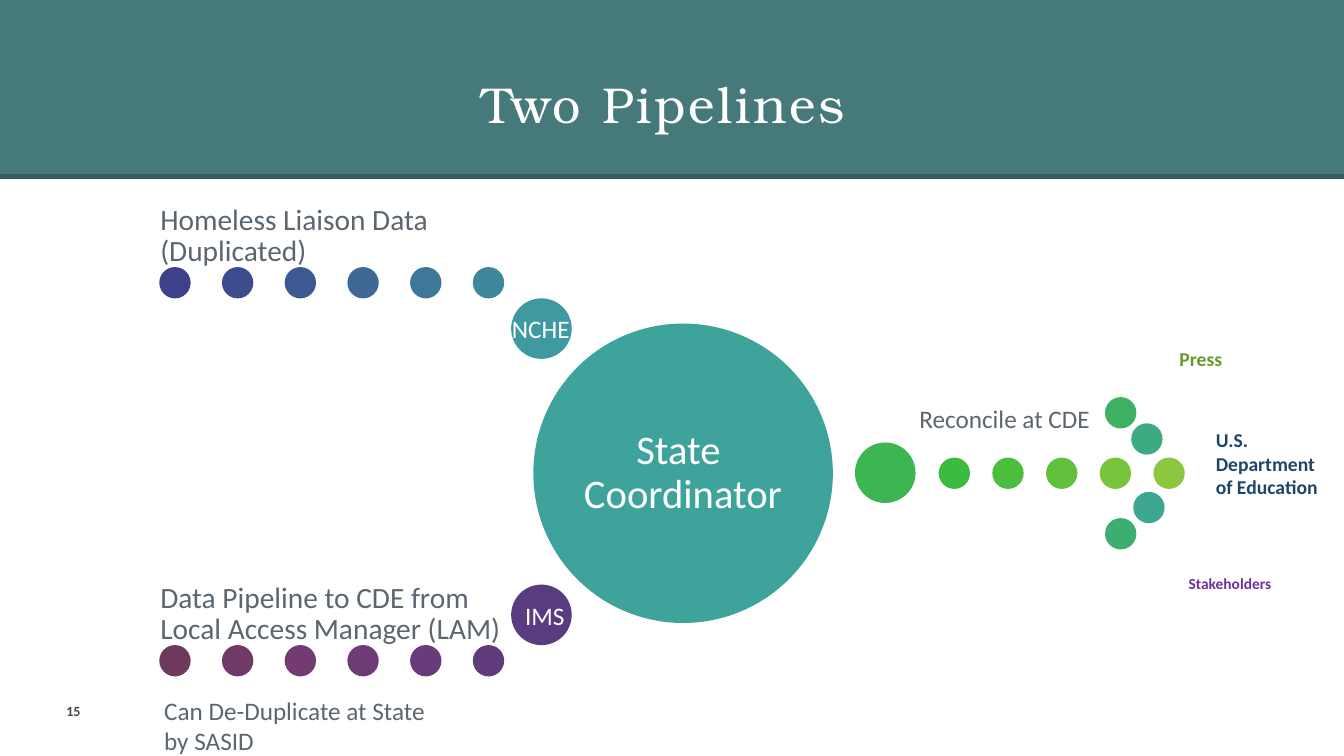
import pptx
import pptx.dml.color
import pptx.enum.shapes
import pptx.enum.text
import pptx.oxml
import pptx.util
from pptx.enum.text import MSO_ANCHOR, PP_ALIGN
from pptx.util import Inches

THEME = {
    "band": "46797A", "rule": "355B5B", "white": "FFFFFF", "grey": "5C6670",
    "number": "45454C", "navy": "1F4669", "purple": "7030A0", "green": "6A972D",
    "title_font": "TeX Gyre Bonum", "body_font": "Calibri",
    "title": 36, "hub": 29, "heading": 21, "label": 18, "outcome": 14,
    "small": 11, "page": 10,
}

# Content
TITLE = "Two Pipelines "
DOT, NODE, HUB = 0.29, 0.58, 2.95

# Dot rows: first left, last left, top, colours from left to right
DOT_ROWS = [
    (9.32, 11.45, 4.55, ["3DBA40", "4DBD3D", "61C13C", "77C43D", "8DC63F"]),
    (1.59, 4.70, 2.66, ["3D408A", "3D4C8E", "3D5991", "3E6895", "3E7798", "3E879C"]),
    (1.59, 4.70, 6.41, ["6D3A5D", "703A67", "733B72", "6F3B77", "683C7A", "613C7D"]),
]
# Single circles: left, top, diameter, colour
CIRCLES = [
    (10.97, 3.95, DOT, "3DB263"),
    (10.97, 5.15, DOT, "3DAE72"),
    (11.23, 4.21, DOT, "3EAA81"),
    (11.25, 4.89, DOT, "3EA78F"),
    (8.49, 4.40, NODE, "3DB652"),
    (5.30, 3.22, HUB, "3EA39B"),
    (5.08, 2.97, NODE, "3E99A0"),
    (5.08, 5.81, NODE, "593C80"),
]
# Pipeline headings stand on their dot rows: text, top
HEADINGS = [
    ("Homeless Liaison Data (Duplicated)", 1.91),
    ("Data Pipeline to CDE from Local Access Manager (LAM)", 5.66),
]
# Labels: text, box, size, colour, bold
LABELS = [
    ("U.S. Department of Education", (11.96, 4.2, 1.22, 0.81), "outcome", "navy", True),
    ("Stakeholders", (11.69, 5.65, 1.33, 0.29), "small", "purple", True),
    ("Press", (11.6, 3.39, 1.53, 0.34), "outcome", "green", True),
    ("Reconcile at CDE", (9.02, 3.95, 1.91, 0.4), "label", "grey", False),
    ("IMS", (5.11, 5.91, 0.65, 0.4), "label", "white", False),
    ("NCHE", (4.98, 3.06, 0.9, 0.4), "label", "white", False),
    ("Can De-Duplicate at State by SASID", (1.53, 6.85, 3.04, 0.71), "label", "grey", False),
]


def rgb(value):
    return pptx.dml.color.RGBColor.from_string(value)


def add_run(paragraph, text, size, color, bold=False, font="body_font"):
    run = paragraph.add_run()
    run.text = text
    run.font.name = THEME[font]
    run.font.size = pptx.util.Pt(THEME[size])
    run.font.color.rgb = rgb(THEME[color])
    run.font.bold = bold
    return run


def add_text_box(slide, box, anchor=MSO_ANCHOR.TOP, inset=None):
    frame = slide.shapes.add_textbox(*map(Inches, box)).text_frame
    frame.word_wrap = True
    frame.vertical_anchor = anchor
    if inset is not None:
        frame.margin_left = frame.margin_right = Inches(inset)
        frame.margin_top = frame.margin_bottom = Inches(inset)
    return frame.paragraphs[0]


def add_filled(slide, kind, box, color):
    shape = slide.shapes.add_shape(kind, *map(Inches, box))
    shape.shadow.inherit = False
    shape.fill.solid()
    shape.fill.fore_color.rgb = rgb(color)
    shape.line.color.rgb = rgb(color)
    shape.line.width = pptx.util.Pt(1.5)
    return shape


def add_circle(slide, left, top, diameter, color):
    oval = pptx.enum.shapes.MSO_SHAPE.OVAL
    add_filled(slide, oval, (left, top, diameter, diameter), color)


def add_header(slide):
    # Band and rule
    rectangle = pptx.enum.shapes.MSO_SHAPE.RECTANGLE
    band = add_filled(slide, rectangle, (0, 0, 13.33, 1.75), THEME["band"])
    band.line.fill.background()
    rule = slide.shapes.add_connector(
        pptx.enum.shapes.MSO_CONNECTOR.STRAIGHT,
        Inches(0), Inches(1.75), Inches(13.33), Inches(1.75))
    rule.line.color.rgb = rgb(THEME["rule"])
    rule.line.width = pptx.util.Pt(3)
    rule._element.spPr.append(pptx.oxml.parse_xml(
        '<a:effectLst xmlns:a="http://schemas.openxmlformats.org/drawingml/2006/main"/>'))

    # Title, raised above the band
    title = slide.shapes.title
    title.left, title.top, title.width, title.height = map(Inches, (0.56, 0.45, 12.22, 1.15))
    rule._element.addnext(title._element)
    title.text_frame.vertical_anchor = MSO_ANCHOR.MIDDLE
    paragraph = title.text_frame.paragraphs[0]
    paragraph.alignment = PP_ALIGN.CENTER
    run = add_run(paragraph, TITLE, "title", "white", font="title_font")
    run._r.get_or_add_rPr().set("spc", "200")


def main():
    presentation = pptx.Presentation()
    presentation.slide_width = Inches(13.33)
    presentation.slide_height = Inches(7.5)
    slide = presentation.slides.add_slide(presentation.slide_layouts[5])
    add_header(slide)

    # Page number
    paragraph = add_text_box(slide, (0.56, 6.85, 4.22, 0.4), MSO_ANCHOR.MIDDLE)
    add_run(paragraph, "15", "page", "number", bold=True)

    # Dots and circles
    for first, last, top, colors in DOT_ROWS:
        step = (last - first) / (len(colors) - 1)
        for index, color in enumerate(colors):
            add_circle(slide, first + index * step, top, DOT, color)
    for circle in CIRCLES:
        add_circle(slide, *circle)

    # Hub text
    paragraph = add_text_box(slide, (5.73, 3.65, 2.09, 2.09), MSO_ANCHOR.MIDDLE, 0.04)
    paragraph.alignment = PP_ALIGN.CENTER
    paragraph.line_spacing = 0.9
    add_run(paragraph, "State ", "hub", "white")
    paragraph.add_line_break()
    add_run(paragraph, "Coordinator", "hub", "white")

    # Pipeline headings
    for text, top in HEADINGS:
        paragraph = add_text_box(slide, (1.59, top, 3.41, 0.75), MSO_ANCHOR.BOTTOM, 0)
        paragraph.line_spacing = 0.9
        add_run(paragraph, text, "heading", "grey")

    # Labels
    for text, box, size, color, bold in LABELS:
        add_run(add_text_box(slide, box), text, size, color, bold)

    presentation.save("out.pptx")


if __name__ == "__main__":
    main()
